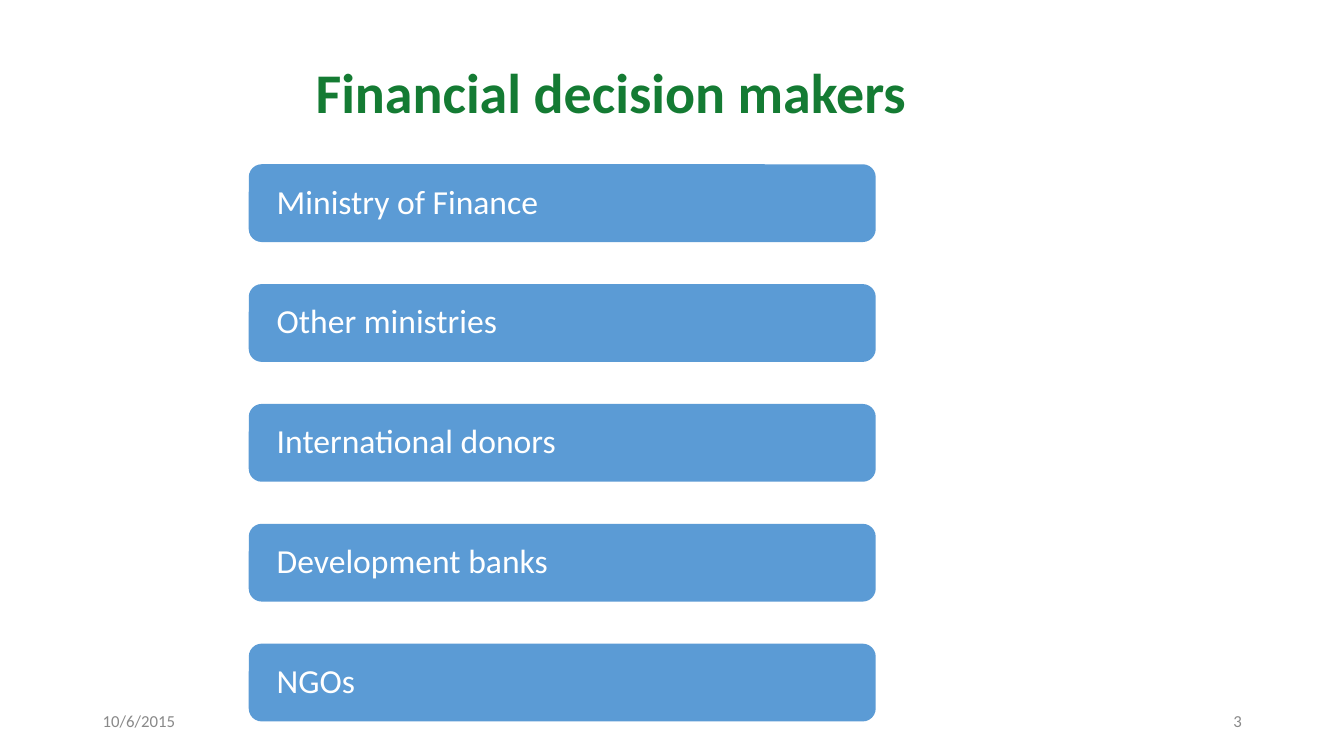
from pptx import Presentation
from pptx.dml.color import RGBColor
from pptx.enum.shapes import MSO_SHAPE
from pptx.enum.text import MSO_ANCHOR, PP_ALIGN
from pptx.util import Cm, Pt

ROUNDED = MSO_SHAPE.ROUNDED_RECTANGLE
MIDDLE = MSO_ANCHOR.MIDDLE
LEFT, RIGHT = PP_ALIGN.LEFT, PP_ALIGN.RIGHT
TITLE_ONLY = 5

FONT = "Calibri"
COLORS = {"title": "147B33", "bar": "5B9BD5", "bar_text": "FFFFFF", "footer": "898989"}
DECISION_MAKERS = [
    "Ministry of Finance",
    "Other ministries",
    "International donors",
    "Development banks",
    "NGOs",
]
FIRST_BAR_TOP = 4.14
BAR_PITCH = 3.02


def color(name):
    return RGBColor.from_string(COLORS[name])


def write_text(shape, text, size, color_name, align=LEFT, bold=False, line_spacing=1.0):
    frame = shape.text_frame
    frame.word_wrap = True
    frame.vertical_anchor = MIDDLE
    paragraph = frame.paragraphs[0]
    paragraph.alignment = align
    paragraph.line_spacing = line_spacing
    run = paragraph.add_run()
    run.text = text
    run.font.name = FONT
    run.font.size = Pt(size)
    run.font.bold = bold
    run.font.color.rgb = color(color_name)


def set_title(slide, text):
    title = slide.shapes.title
    title.left, title.top = Cm(7.7), Cm(0.81)
    title.width, title.height = Cm(22.86), Cm(3.18)
    write_text(title, text, 40, "title", bold=True, line_spacing=0.9)


def add_bar(slide, top, text):
    bar = slide.shapes.add_shape(ROUNDED, Cm(6.27), Cm(top), Cm(15.8), Cm(1.96))
    bar.shadow.inherit = False
    bar.fill.solid()
    bar.fill.fore_color.rgb = color("bar")
    bar.line.fill.background()
    frame = bar.text_frame
    frame.margin_left = frame.margin_right = Cm(0.61)
    frame.margin_top = frame.margin_bottom = 0
    write_text(bar, text, 24, "bar_text", line_spacing=0.9)


def add_footer(slide, left, text, align):
    box = slide.shapes.add_textbox(Cm(left), Cm(17.65), Cm(7.62), Cm(1.02))
    write_text(box, text, 12, "footer", align)


def main():
    presentation = Presentation()
    presentation.slide_width = Cm(33.87)
    presentation.slide_height = Cm(19.05)
    slide = presentation.slides.add_slide(presentation.slide_layouts[TITLE_ONLY])

    set_title(slide, "Financial decision makers")
    add_footer(slide, 2.34, "10/6/2015", LEFT)
    add_footer(slide, 23.93, "3", RIGHT)
    for index, name in enumerate(DECISION_MAKERS):
        add_bar(slide, FIRST_BAR_TOP + index * BAR_PITCH, name)

    presentation.save("out.pptx")


if __name__ == "__main__":
    main()
